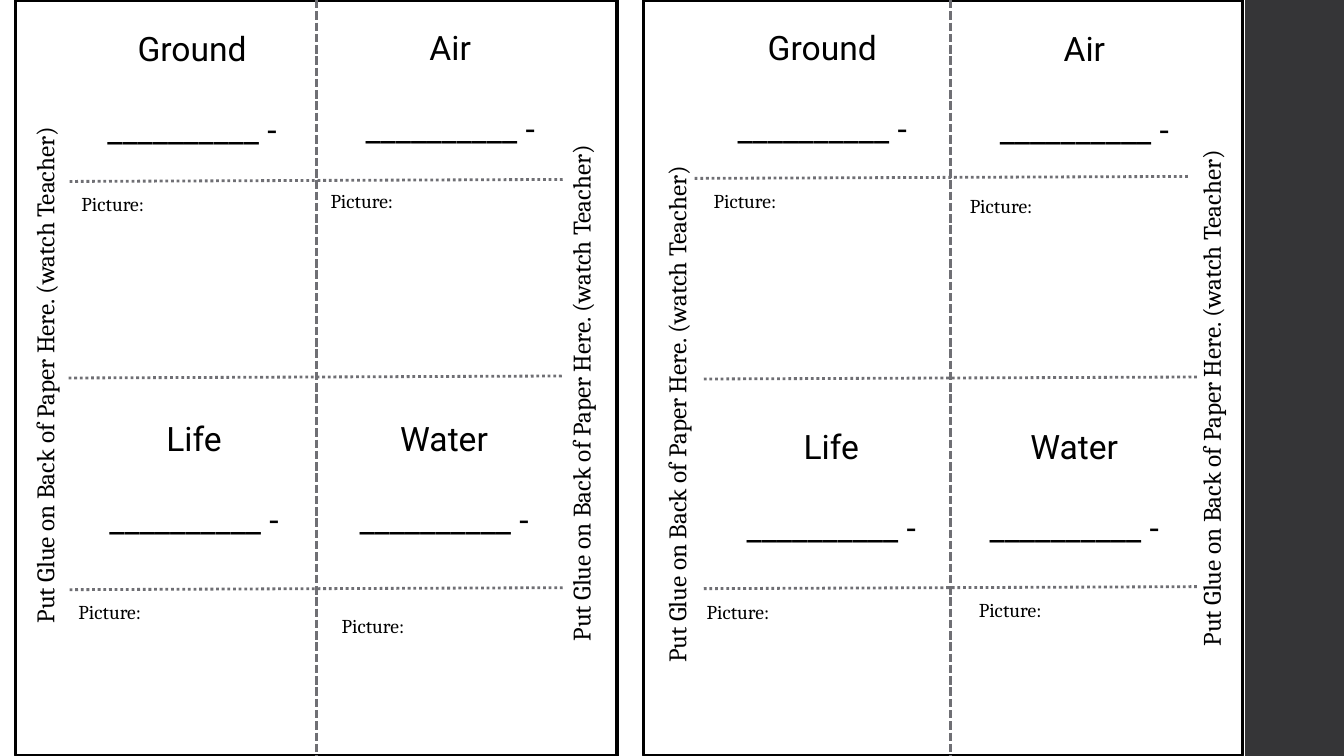
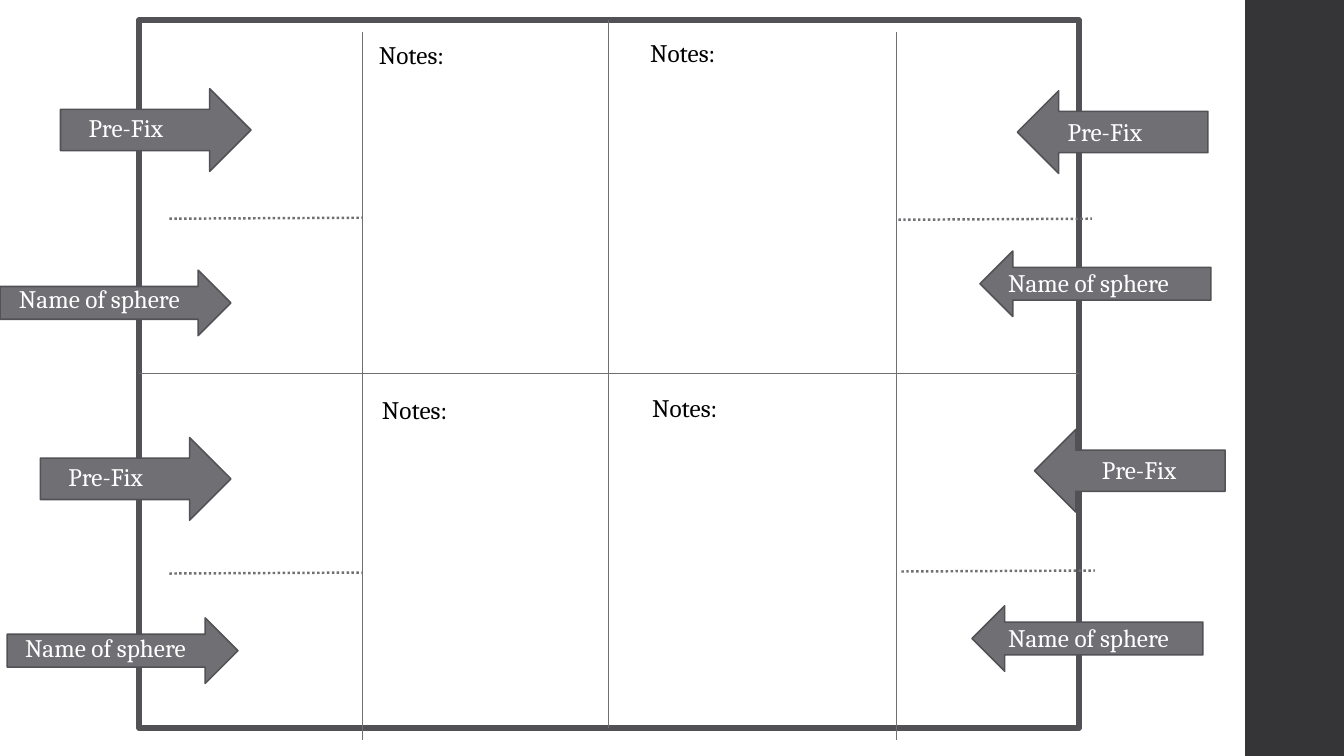
from lxml import etree
from pptx import Presentation, util as u
from pptx.dml.color import RGBColor
from pptx.enum import dml, shapes, text
from pptx.oxml.ns import qn

PX = 9144  # 100 px to the inch
HUES = {"paper": "FFFFFF", "ink": "000000", "band": "353537",
        "gray": "6F6F74", "edge": "525256"}
FORMS = {
    "head": {"name": "Roboto", "size": u.Pt(24)},
    "body": {"name": "Cambria", "size": u.Pt(18)},
    "small": {"name": "Cambria", "size": u.Pt(14)},
}
DOT, DASH = dml.MSO_LINE.ROUND_DOT, dml.MSO_LINE.SQUARE_DOT
KIND = shapes.MSO_SHAPE
MID, LEFT = text.PP_ALIGN.CENTER, text.PP_ALIGN.LEFT


def hue(key):
    return RGBColor.from_string(HUES[key])


class Deck:
    """Holds the style and the current slide."""

    def __init__(self):
        self.file = Presentation()
        self.file.slide_width = 1333 * PX
        self.file.slide_height = 750 * PX
        self.slide = None

    def page(self):
        """Start a slide with the dark band on its right."""
        self.slide = self.file.slides.add_slide(self.file.slide_layouts[6])
        self.shape(KIND.RECTANGLE, (1235, 0, 98, 750), "band")

    def shape(self, kind, box, fill, edge=None, width=0):
        item = self.slide.shapes.add_shape(kind, *(n * PX for n in box))
        item.shadow.inherit = False
        item.fill.solid()
        item.fill.fore_color.rgb = hue(fill)
        if edge:
            item.line.color.rgb = hue(edge)
            item.line.width = u.Pt(width)
        else:
            item.line.fill.background()

    def line(self, x1, y1, x2, y2, width, dash=None):
        ends = (n * PX for n in (x1, y1, x2, y2))
        item = self.slide.shapes.add_connector(
            shapes.MSO_CONNECTOR.STRAIGHT, *ends)
        item.line.color.rgb = hue("gray")
        item.line.width = u.Pt(width)
        if dash:
            item.line.dash_style = dash
        etree.SubElement(item.element.spPr, qn("a:effectLst"))

    def label(self, words, box, form="body", color="ink", align=LEFT,
              turn=0, gap=0):
        item = self.slide.shapes.add_textbox(*(n * PX for n in box))
        item.rotation = turn
        frame = item.text_frame
        frame.word_wrap = True
        frame.auto_size = text.MSO_AUTO_SIZE.SHAPE_TO_FIT_TEXT
        frame.text = words
        for row, para in enumerate(frame.paragraphs):
            para.alignment = align
            if row:
                para.space_before = u.Pt(gap)
            for run in para.runs:
                for key, val in FORMS[form].items():
                    setattr(run.font, key, val)
                run.font.color.rgb = hue(color)

    def arrow(self, kind, box, words, spot):
        self.shape(kind, box, "gray", "edge", 1.1)
        self.label(words, spot, color="paper")


def cards(deck):
    """Two fold-up cards side by side."""
    deck.page()
    # Sheets and fold lines
    for left, wide in (15, 597), (638, 594):
        deck.shape(KIND.RECTANGLE, (left, 0, wide, 750), "paper", "ink", 2.25)
    for x in 314, 943:
        deck.line(x, 0, x, 750, 2, DASH)
    for x, y in ((69, 180), (68, 375), (69, 585),
                 (689, 177), (698, 376), (698, 584)):
        deck.line(x, y, x + 491, y - 2, 2, DOT)
    # Glue strips
    for x, y in (-328, 352), (204, 370), (829, 375), (299, 391):
        deck.label("Put Glue on Back of Paper Here. (watch Teacher)",
                   (x, y, 744, 40), align=MID, turn=270)
    # Sphere names with a blank to fill in
    heads = {"Ground": ((86, 23), (711, 22)), "Air": ((342, 22), (971, 23)),
             "Life": ((88, 410), (720, 418)),
             "Water": ((336, 410), (961, 418))}
    for name, spots in heads.items():
        for x, y in spots:
            deck.label(f"{name}\n__________ -", (x, y, 209, 131), "head",
                       align=MID, gap=29)
    # Room for drawings
    for x, y in ((71, 186), (318, 183), (68, 590), (329, 604),
                 (698, 183), (952, 187), (691, 590), (961, 588)):
        deck.label("Picture:", (x, y, 189, 34), "small")


def inside(deck):
    """The inner side, with arrows that explain each part."""
    deck.page()
    # Frame and grid
    deck.shape(KIND.RECTANGLE, (138, 20, 932, 702), "paper", "edge", 4.5)
    deck.line(604, 20, 604, 722, 0.75)
    deck.line(138, 371, 1070, 371, 0.75)
    for x in 360, 889:
        deck.line(x, 32, x, 734, 0.75)
    for x, y in (168, 217), (168, 569), (891, 218), (894, 567):
        deck.line(x, y, x + 192, y - 1, 1.75, DOT)
    # Arrows: place of the shape, then of its words
    right, left = KIND.RIGHT_ARROW, KIND.LEFT_ARROW
    sets = (
        ("Pre-Fix", (189, 82), (149, 40), (
            (right, (60, 88), (78, 107)), (right, (40, 434), (58, 453)),
            (left, (1009, 90), (1049, 111)),
            (left, (1026, 426), (1083, 446)))),
        ("Name of sphere", (229, 65), (207, 40), (
            (right, (0, 268), (9, 276)), (right, (7, 613), (15, 622)),
            (left, (972, 249), (990, 260)), (left, (964, 601), (990, 612)))),
    )
    for words, size, room, spots in sets:
        for kind, place, spot in spots:
            deck.arrow(kind, place + size, words, spot + room)
    # Notes
    for x, y in (366, 34), (635, 32), (369, 386), (637, 384):
        deck.label("Notes:", (x, y, 209, 40))


def main():
    deck = Deck()
    cards(deck)
    inside(deck)
    deck.file.save("out.pptx")


if __name__ == "__main__":
    main()
